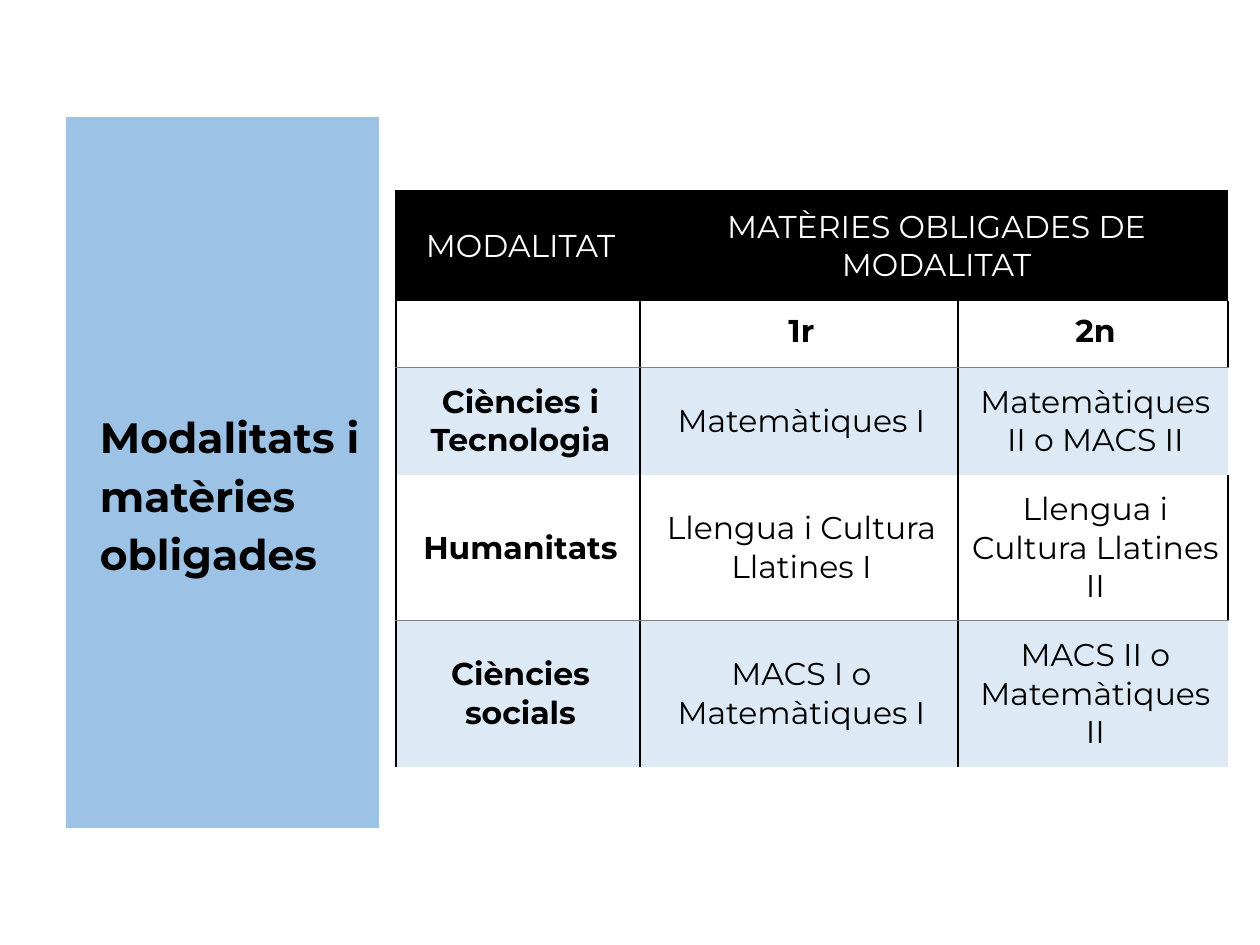
"""Build a slide with a title panel and a table of compulsory subjects."""
from dataclasses import dataclass

from lxml.etree import SubElement
from pptx import Presentation
from pptx.dml.color import RGBColor
from pptx.enum.shapes import MSO_SHAPE
from pptx.enum.text import MSO_ANCHOR, PP_ALIGN
from pptx.oxml.ns import qn
from pptx.util import Pt

TITLE = "Modalitats i matèries obligades"
ROWS = [
    ("MODALITAT", "MATÈRIES OBLIGADES DE MODALITAT", ""),
    ("", "1r", "2n"),
    ("Ciències i Tecnologia", "Matemàtiques I", "Matemàtiques II o MACS II"),
    ("Humanitats", "Llengua i Cultura Llatines I", "Llengua i Cultura Llatines II"),
    ("Ciències socials", "MACS I o Matemàtiques I", "MACS II o Matemàtiques II"),
]
COL_WIDTHS = (244, 318, 270)
ROW_HEIGHTS = (110, 67, 107, 146, 146)
PANEL = (66, 117, 313, 711)
TABLE_AT = (396, 191)
PANEL_INSETS = (34, 287, 9, 5)
CELL_INSETS = (14, 11, 9, 11)


@dataclass(frozen=True)
class Theme:
    font: str = "Montserrat"
    title: float = 24.2
    body: float = 18
    black: str = "000000"
    white: str = "FFFFFF"
    tint: str = "DDEAF6"
    panel: str = "9CC2E5"
    rule: str = "7F7F7F"


T = Theme()


def px(n):
    return round(n * 914400 / 126)


def paint(fill, color):
    fill.solid()
    fill.fore_color.rgb = RGBColor.from_string(color)


def set_insets(box, insets):
    box.margin_left, box.margin_top, box.margin_right, box.margin_bottom = map(px, insets)


def write(tf, text, *, size=T.body, color=T.black, bold=False,
          align=PP_ALIGN.CENTER, spacing=None):
    p = tf.paragraphs[0]
    p.alignment = align
    p.line_spacing = spacing
    p.font.size = Pt(size)
    if text:
        r = p.add_run()
        r.text = text
        r.font.name = T.font
        r.font.size = Pt(size)
        r.font.bold = bold
        r.font.color.rgb = RGBColor.from_string(color)


def set_borders(cell, borders):
    tc_pr = cell._tc.get_or_add_tcPr()
    for i, side in enumerate("LRTB"):
        color, width = borders.get(side, (None, 0))
        ln = SubElement(tc_pr, qn(f"a:ln{side}"), w=str(Pt(width)))
        if color:
            SubElement(SubElement(ln, qn("a:solidFill")), qn("a:srgbClr"), val=color)
        else:
            SubElement(ln, qn("a:noFill"))
        tc_pr.insert(i, ln)


def cell_style(row, col):
    edge, rule = (T.black, 1.5), (T.rule, 0.75)
    if row == 0:
        return T.black, {"T": edge, **({"L": edge} if col == 0 else {})}
    if row % 2:
        return T.white, {"L": edge, "R": edge, "B": rule}
    return T.tint, {"L": edge, "T": rule, **({"R": edge} if col < 2 else {})}


def add_panel(slide):
    s = slide.shapes.add_shape(MSO_SHAPE.RECTANGLE, *map(px, PANEL))
    s.shadow.inherit = False
    paint(s.fill, T.panel)
    s.line.fill.background()
    tf = s.text_frame
    tf.word_wrap = True
    tf.vertical_anchor = MSO_ANCHOR.TOP
    set_insets(tf, PANEL_INSETS)
    write(tf, TITLE, size=T.title, bold=True, align=PP_ALIGN.LEFT, spacing=1.15)


def add_subjects(slide):
    size = sum(COL_WIDTHS), sum(ROW_HEIGHTS)
    table = slide.shapes.add_table(len(ROWS), len(COL_WIDTHS),
                                   *map(px, TABLE_AT + size)).table
    for column, width in zip(table.columns, COL_WIDTHS):
        column.width = px(width)
    for row, height in zip(table.rows, ROW_HEIGHTS):
        row.height = px(height)
    table.cell(0, 1).merge(table.cell(0, 2))
    for i, texts in enumerate(ROWS):
        for j, text in enumerate(texts):
            cell = table.cell(i, j)
            fill, borders = cell_style(i, j)
            paint(cell.fill, fill)
            set_borders(cell, borders)
            set_insets(cell, CELL_INSETS)
            cell.vertical_anchor = MSO_ANCHOR.TOP if i == 1 else MSO_ANCHOR.MIDDLE
            write(cell.text_frame, text, color=T.white if i == 0 else T.black,
                  bold=i == 1 or (i > 1 and j == 0))


def main():
    prs = Presentation()
    prs.slide_width, prs.slide_height = px(1260), px(945)
    slide = prs.slides.add_slide(prs.slide_layouts[6])
    add_panel(slide)
    add_subjects(slide)
    prs.save("out.pptx")


if __name__ == "__main__":
    main()
